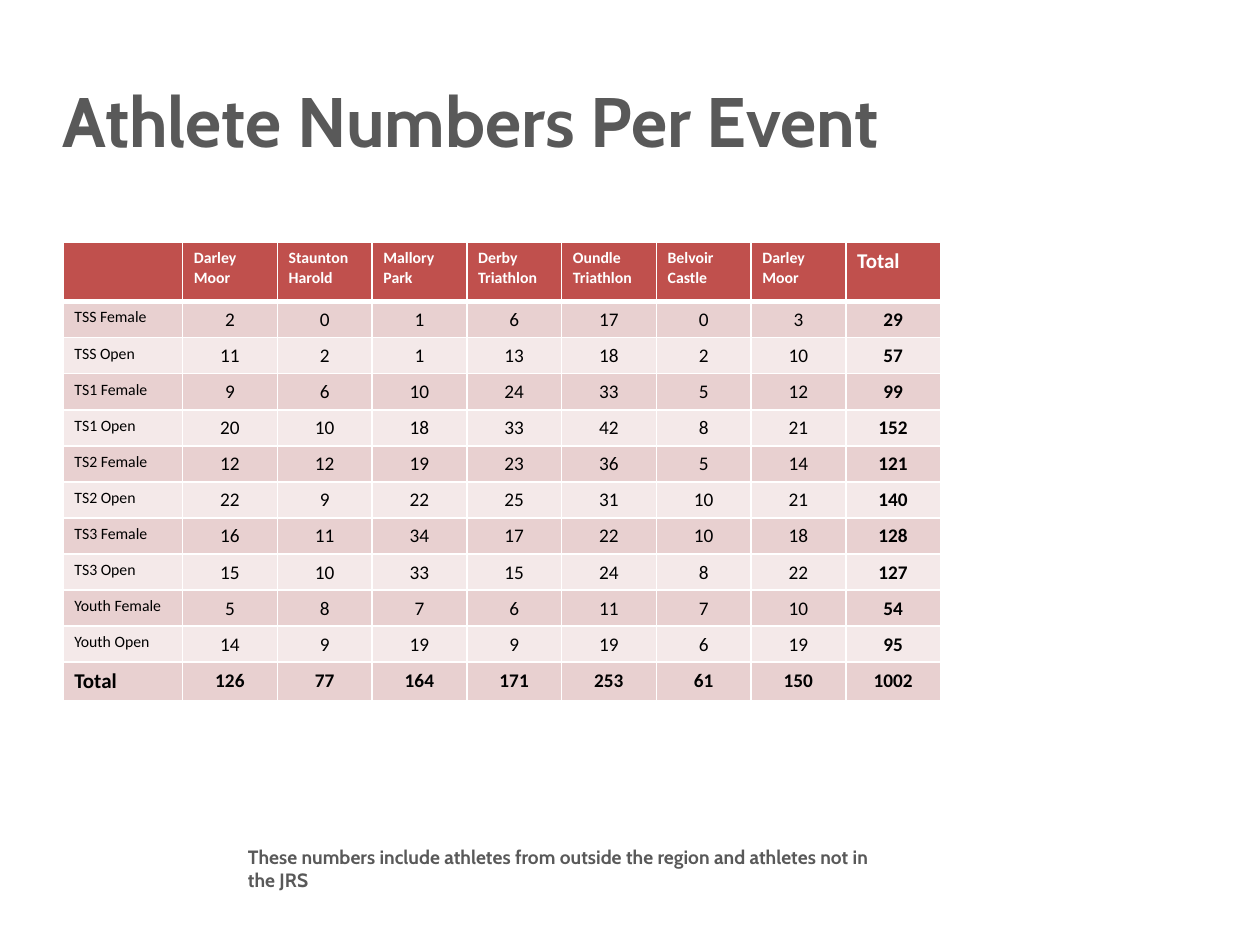
from lxml.etree import SubElement
from pptx import Presentation
from pptx.dml.color import RGBColor
from pptx.enum.text import MSO_ANCHOR, PP_ALIGN
from pptx.oxml.ns import qn
from pptx.util import Cm, Pt

TITLE = "Athlete Numbers Per Event"
NOTE = "These numbers include athletes from outside the region and athletes not in the JRS"
EVENTS = ["Darley Moor", "Staunton Harold", "Mallory Park", "Derby Triathlon",
          "Oundle Triathlon", "Belvoir Castle", "Darley Moor"]
ATHLETES = {
    "TSS Female": [2, 0, 1, 6, 17, 0, 3],
    "TSS Open": [11, 2, 1, 13, 18, 2, 10],
    "TS1 Female": [9, 6, 10, 24, 33, 5, 12],
    "TS1 Open": [20, 10, 18, 33, 42, 8, 21],
    "TS2 Female": [12, 12, 19, 23, 36, 5, 14],
    "TS2 Open": [22, 9, 22, 25, 31, 10, 21],
    "TS3 Female": [16, 11, 34, 17, 22, 10, 18],
    "TS3 Open": [15, 10, 33, 15, 24, 8, 22],
    "Youth Female": [5, 8, 7, 6, 11, 7, 10],
    "Youth Open": [14, 9, 19, 9, 19, 6, 19],
}
GREY, WHITE, BLACK, RED = "595959", "FFFFFF", "000000", "C0504D"
BANDS = ["E8D0D0", "F4E9E9"]
LABEL_W, COL_W = 2.41, 1.91
HEADER_H, ROW_H, TOTAL_H = 1.19, 0.72, 0.74


def rgb(color):
    return RGBColor.from_string(color)


def style(p, size, font, color, bold):
    for r in p.runs:
        r.font.size, r.font.name, r.font.bold = Pt(size), font, bold
        r.font.color.rgb = rgb(color)


def add_text(s, text, left, top, width, height, size):
    tf = s.shapes.add_textbox(Cm(left), Cm(top), Cm(width), Cm(height)).text_frame
    tf.word_wrap = True
    tf.text = text
    style(tf.paragraphs[0], size, "Cabin", GREY, True)
    return tf


def set_borders(cell, bottom):
    """Draw white cell borders; must run before the cell is filled."""
    tc_pr = cell._tc.get_or_add_tcPr()
    for side, width in (("L", 1), ("R", 1), ("T", 1), ("B", bottom)):
        ln = SubElement(tc_pr, qn(f"a:ln{side}"), w=str(Pt(width)))
        fill = SubElement(ln, qn("a:solidFill"))
        SubElement(fill, qn("a:srgbClr"), val=WHITE)


def fill_cell(cell, value, row, col, last_row, last_col):
    header, total = row == 0, row == last_row
    set_borders(cell, 3 if header else 1)
    cell.fill.solid()
    cell.fill.fore_color.rgb = rgb(RED if header else BANDS[(row - 1) % 2])
    cell.margin_left = cell.margin_right = Cm(0.23)
    cell.margin_top = cell.margin_bottom = Cm(0.13)
    cell.text_frame.text = str(value)
    p = cell.text_frame.paragraphs[0]
    is_number = not header and col > 0
    if is_number:
        p.alignment = PP_ALIGN.CENTER
    size = 12 if value == "Total" else 11 if is_number else 9
    style(p, size, "Calibri", WHITE if header else BLACK,
          header or total or col == last_col)


def add_athlete_table(s):
    rows = [["", *EVENTS, "Total"]]
    rows += [[name, *counts, sum(counts)] for name, counts in ATHLETES.items()]
    sums = [sum(column) for column in zip(*ATHLETES.values())]
    rows.append(["Total", *sums, sum(sums)])

    widths = [LABEL_W] + [COL_W] * (len(EVENTS) + 1)
    heights = [HEADER_H] + [ROW_H] * len(ATHLETES) + [TOTAL_H]
    table = s.shapes.add_table(len(rows), len(widths), Cm(1.27), Cm(4.89),
                               Cm(sum(widths)), Cm(sum(heights))).table
    for column, width in zip(table.columns, widths):
        column.width = Cm(width)
    for i, (values, height) in enumerate(zip(rows, heights)):
        table.rows[i].height = Cm(height)
        for j, value in enumerate(values):
            fill_cell(table.cell(i, j), value, i, j, len(rows) - 1, len(widths) - 1)


def main():
    prs = Presentation()
    prs.slide_width, prs.slide_height = Cm(25.4), Cm(19.05)
    s = prs.slides.add_slide(prs.slide_layouts[6])

    title = add_text(s, TITLE, 1.27, 0.97, 22.86, 3.18, 40)
    title.margin_left = 0
    title.vertical_anchor = MSO_ANCHOR.MIDDLE
    title.paragraphs[0].line_spacing = 0.8

    add_text(s, NOTE, 4.75, 16.92, 13.28, 0.99, 11)
    add_athlete_table(s)
    prs.save("out.pptx")


if __name__ == "__main__":
    main()
